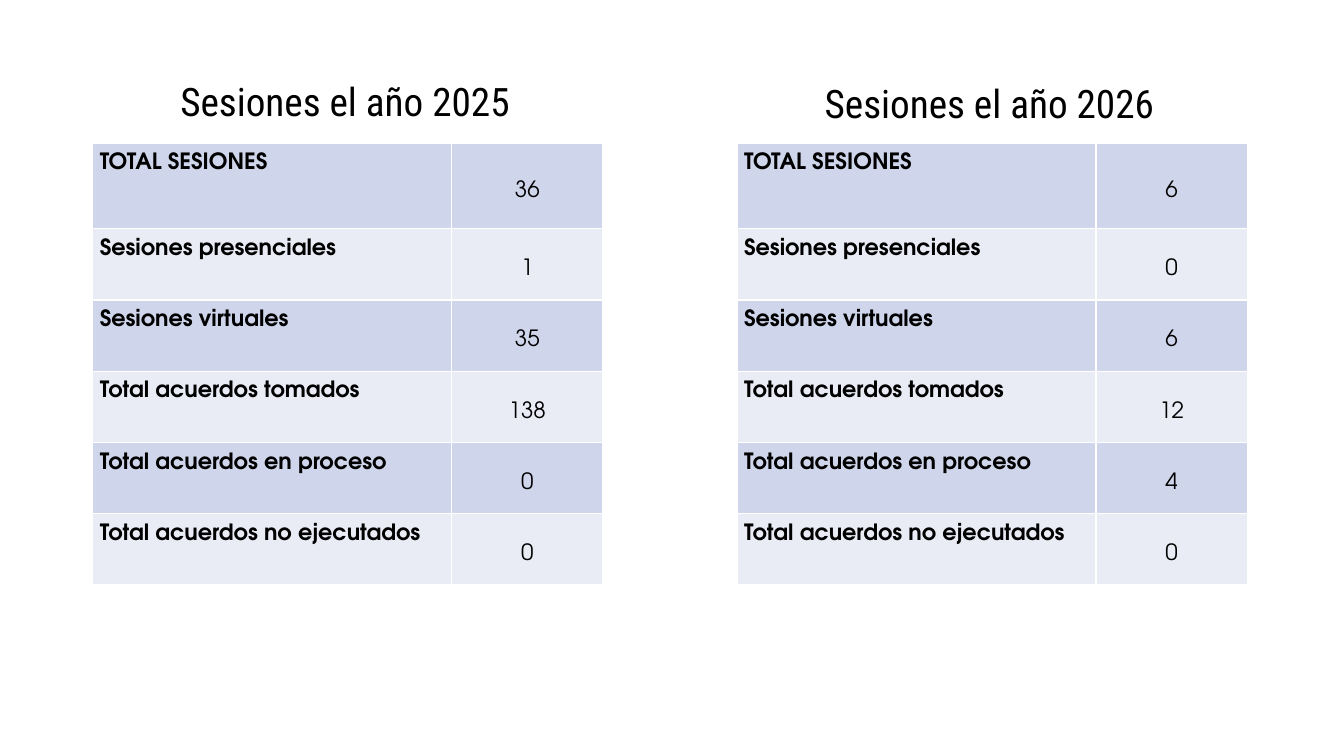
from dataclasses import dataclass

from lxml import etree
from pptx import Presentation
from pptx import util as u
from pptx.dml.color import RGBColor
from pptx.enum import text
from pptx.oxml import ns


@dataclass(frozen=True)
class Theme:
    ink: str = "000000"
    border: str = "FFFFFF"
    bands: tuple = ("CFD5EA", "E9EBF5")
    heading_font: str = "Roboto Condensed"
    table_font: str = "TeX Gyre Adventor"
    heading_size: int = 28
    table_size: int = 16


def apply(target, values):
    for name, value in values.items():
        setattr(target, name, value)


class SlideBuilder:
    """Places elements on a grid of 100 columns by 100 rows."""

    def __init__(self, presentation, theme):
        self.theme = theme
        self.column = presentation.slide_width / 100
        self.row = presentation.slide_height / 100
        self.slide = presentation.slides.add_slide(presentation.slide_layouts[6])

    def across(self, columns):
        return u.Emu(round(columns * self.column))

    def down(self, rows):
        return u.Emu(round(rows * self.row))

    def set_text(self, frame, words, paragraph_format, font_format):
        paragraph = frame.paragraphs[0]
        paragraph.text = words
        apply(paragraph, paragraph_format)
        font = paragraph.runs[0].font
        apply(font, font_format)
        font.color.rgb = RGBColor.from_string(self.theme.ink)

    def heading(self, words, left, top, width, height):
        box = self.slide.shapes.add_textbox(
            self.across(left), self.down(top), self.across(width), self.down(height))
        frame = box.text_frame
        apply(frame, {"word_wrap": False, "auto_size": text.MSO_AUTO_SIZE.SHAPE_TO_FIT_TEXT})
        self.set_text(frame, words, {}, {"name": self.theme.heading_font,
                                         "size": u.Pt(self.theme.heading_size)})

    def table(self, rows, left, top, widths, heights):
        shape = self.slide.shapes.add_table(
            len(rows), len(widths), self.across(left), self.down(top),
            self.across(sum(widths)), self.down(sum(heights)))
        table = shape.table
        apply(table, {"first_row": False, "horz_banding": False})
        for column, width in zip(table.columns, widths):
            column.width = self.across(width)
        for row, height in zip(table.rows, heights):
            row.height = self.down(height)
        for index, (label, value) in enumerate(rows):
            align = text.PP_ALIGN.JUSTIFY if index else text.PP_ALIGN.LEFT
            band = self.theme.bands[index % 2]
            self.cell(table.cell(index, 0), label, band, align, text.MSO_ANCHOR.TOP, True)
            self.cell(table.cell(index, 1), str(value), band,
                      text.PP_ALIGN.CENTER, text.MSO_ANCHOR.MIDDLE, False)

    def cell(self, cell, words, band, align, anchor, bold):
        apply(cell, {"margin_left": u.Inches(0.07), "margin_right": u.Inches(0.07),
                     "margin_top": 0, "margin_bottom": 0, "vertical_anchor": anchor})
        self.set_text(cell.text_frame, words,
                      {"alignment": align, "line_spacing": 1.5, "space_after": u.Pt(8)},
                      {"name": self.theme.table_font, "size": u.Pt(self.theme.table_size),
                       "bold": bold})
        # Borders come before the fill in the cell properties
        properties = cell._tc.get_or_add_tcPr()
        for side in ("a:lnL", "a:lnR", "a:lnT", "a:lnB"):
            line = etree.SubElement(properties, ns.qn(side), w=str(u.Pt(1)))
            fill = etree.SubElement(line, ns.qn("a:solidFill"))
            etree.SubElement(fill, ns.qn("a:srgbClr"), val=self.theme.border)
        cell.fill.solid()
        cell.fill.fore_color.rgb = RGBColor.from_string(band)


LABELS = ("TOTAL SESIONES", "Sesiones presenciales", "Sesiones virtuales",
          "Total acuerdos tomados", "Total acuerdos en proceso",
          "Total acuerdos no ejecutados")
# Year, top of its heading, values
YEARS = ((2025, 9.6, (36, 1, 35, 138, 0, 0)),
         (2026, 9.87, (6, 0, 6, 12, 4, 0)))
PANEL_STEP = 47.94


def main():
    presentation = Presentation()
    apply(presentation, {"slide_width": u.Inches(13.33), "slide_height": u.Inches(7.5)})
    builder = SlideBuilder(presentation, Theme())

    # One panel for each year: heading above its table
    for panel, (year, heading_top, values) in enumerate(YEARS):
        offset = panel * PANEL_STEP
        builder.heading(f"Sesiones el año {year}", 12.68 + offset, heading_top, 26.33, 7.6)
        builder.table(list(zip(LABELS, values)), 6.9 + offset, 18.93,
                      widths=(26.71, 11.25), heights=(11.33,) + (9.42,) * 5)

    presentation.save("out.pptx")


if __name__ == "__main__":
    main()
